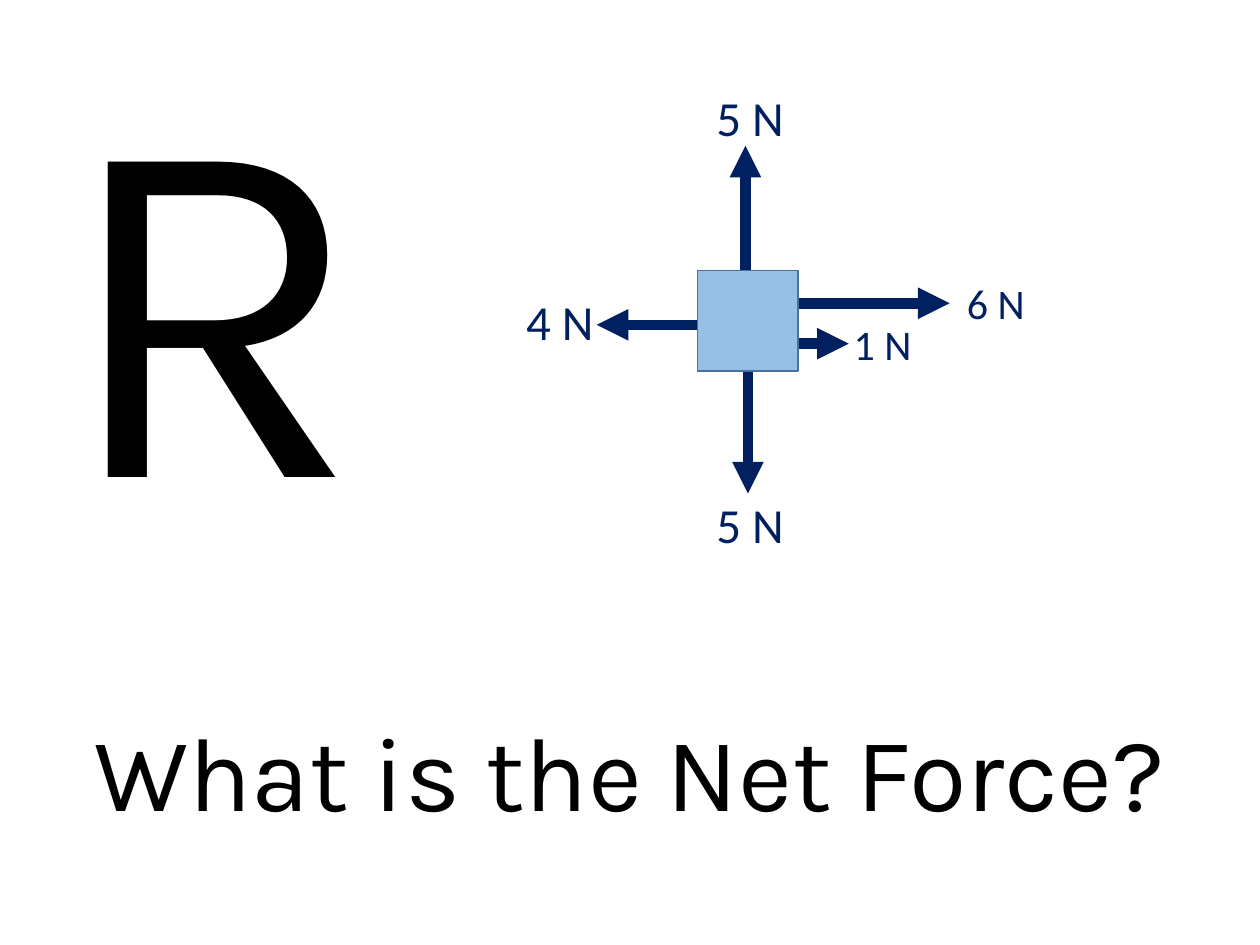
from lxml.etree import SubElement
from pptx import Presentation
from pptx.dml.color import RGBColor
from pptx.enum.shapes import MSO_CONNECTOR, MSO_SHAPE
from pptx.enum.text import MSO_ANCHOR, PP_ALIGN
from pptx.oxml.ns import qn
from pptx.util import Pt

COLORS = {"ink": "000000", "force": "002060", "body": "98C0E4", "edge": "43739E"}
DIRECTIONS = {"up": (0, -1), "down": (0, 1), "left": (-1, 0), "right": (1, 0)}
FORCES = [
    ("up", "5 N", 72, (27.4, 0.7), (3.6, -108), 28),
    ("down", "5 N", 72, (28.8, 55.4), (3.6, 124.6), 28),
    ("left", "4 N", 57.6, (0, 31), (-105.1, 8.6), 28),
    ("right", "6 N", 86.4, (57.6, 18.7), (146.9, 0.7), 24),
    ("right", "1 N", 28.8, (57.6, 41.8), (82.1, 23.8), 24),
]


def rgb(name):
    """Return the named palette colour."""
    return RGBColor.from_string(COLORS[name])


def add_text(s, box, text, size, font, color, align=PP_ALIGN.LEFT, anchor=MSO_ANCHOR.TOP, spacing=None):
    """Place one paragraph of text in a box."""
    tf = s.shapes.add_textbox(*map(Pt, box)).text_frame
    tf.word_wrap = True
    tf.vertical_anchor = anchor
    p = tf.paragraphs[0]
    p.text = text
    p.alignment = align
    p.line_spacing = spacing
    p.font.size, p.font.name = Pt(size), font
    p.font.color.rgb = rgb(color)


def add_arrow(s, x, y, dx, dy):
    """Draw a force arrow from a point along an offset."""
    arrow = s.shapes.add_connector(MSO_CONNECTOR.STRAIGHT, Pt(x), Pt(y), Pt(x + dx), Pt(y + dy))
    arrow.line.color.rgb = rgb("force")
    arrow.line.width = Pt(6)
    SubElement(arrow.line._get_or_add_ln(), qn("a:tailEnd"), type="triangle")
    SubElement(arrow._element.spPr, qn("a:effectLst"))


def add_force_diagram(s, left, top, side):
    """Draw the body with its force arrows and their labels."""
    for direction, text, length, start, label, size in FORCES:
        dx, dy = (d * length for d in DIRECTIONS[direction])
        add_arrow(s, left + start[0], top + start[1], dx, dy)
        box = (left + label[0], top + label[1], size * 1.2 + 20, size * 1.2 + 7.2)
        add_text(s, box, text, size, "Calibri", "force")
    body = s.shapes.add_shape(MSO_SHAPE.RECTANGLE, Pt(left), Pt(top), Pt(side), Pt(side))
    body.shadow.inherit = False
    body.fill.solid()
    body.fill.fore_color.rgb = rgb("body")
    body.line.color.rgb = rgb("edge")
    body.line.width = Pt(1)


def main():
    """Build and save the slide."""
    prs = Presentation()
    prs.slide_width, prs.slide_height = Pt(720), Pt(540)
    s = prs.slides.add_slide(prs.slide_layouts[6])
    add_text(s, (19.8, 28.1, 201.6, 310.3), "R", 287, "Karla", "ink", PP_ALIGN.CENTER, MSO_ANCHOR.BOTTOM, 0.9)
    add_force_diagram(s, 398.6, 154.6, 57.6)
    add_text(s, (36, 400.3, 648, 80), "What is the Net Force?", 60, "Karla", "ink", PP_ALIGN.CENTER)
    prs.save("out.pptx")


if __name__ == "__main__":
    main()
